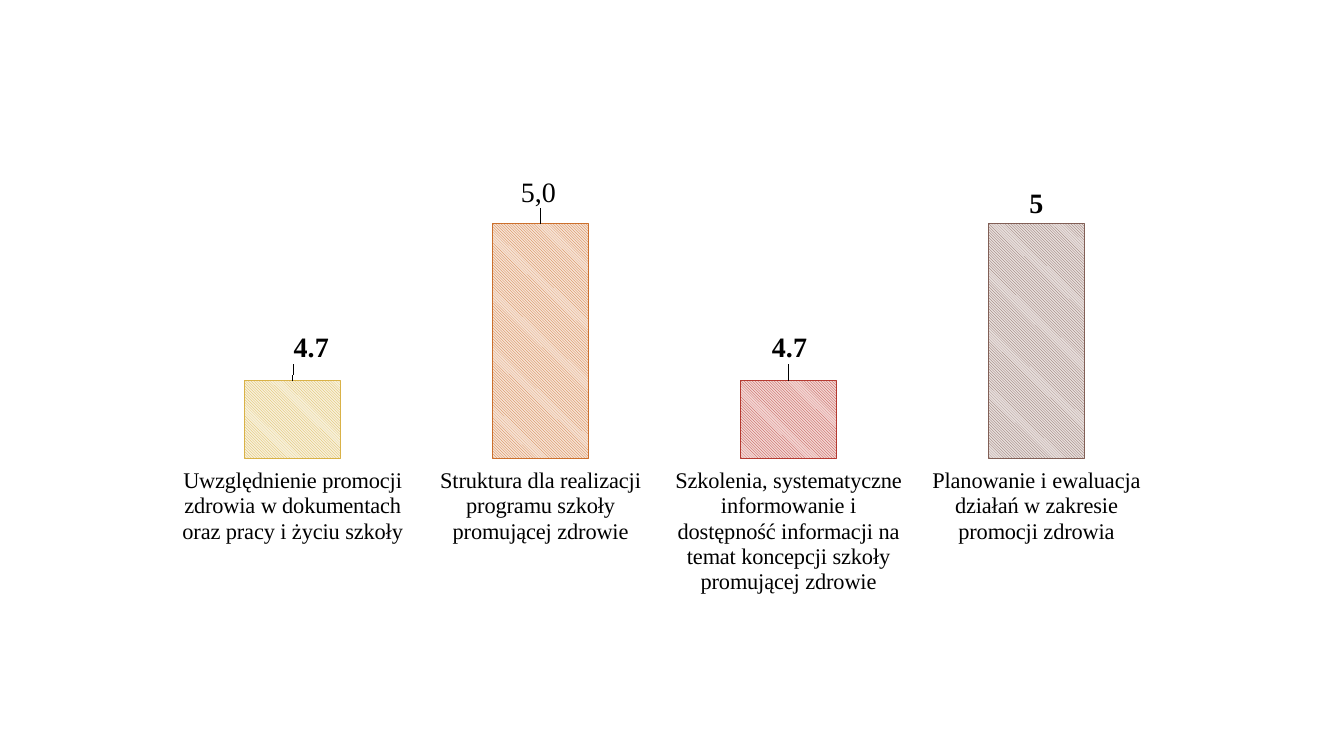
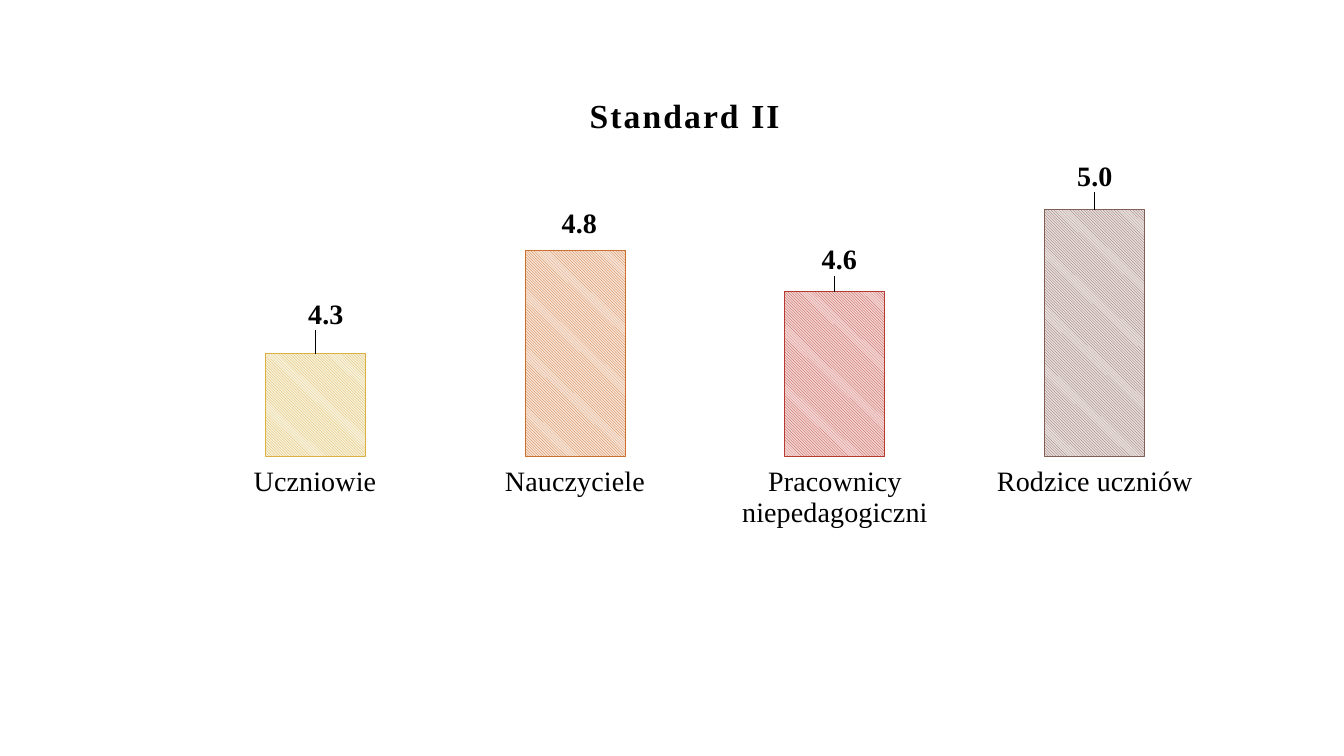
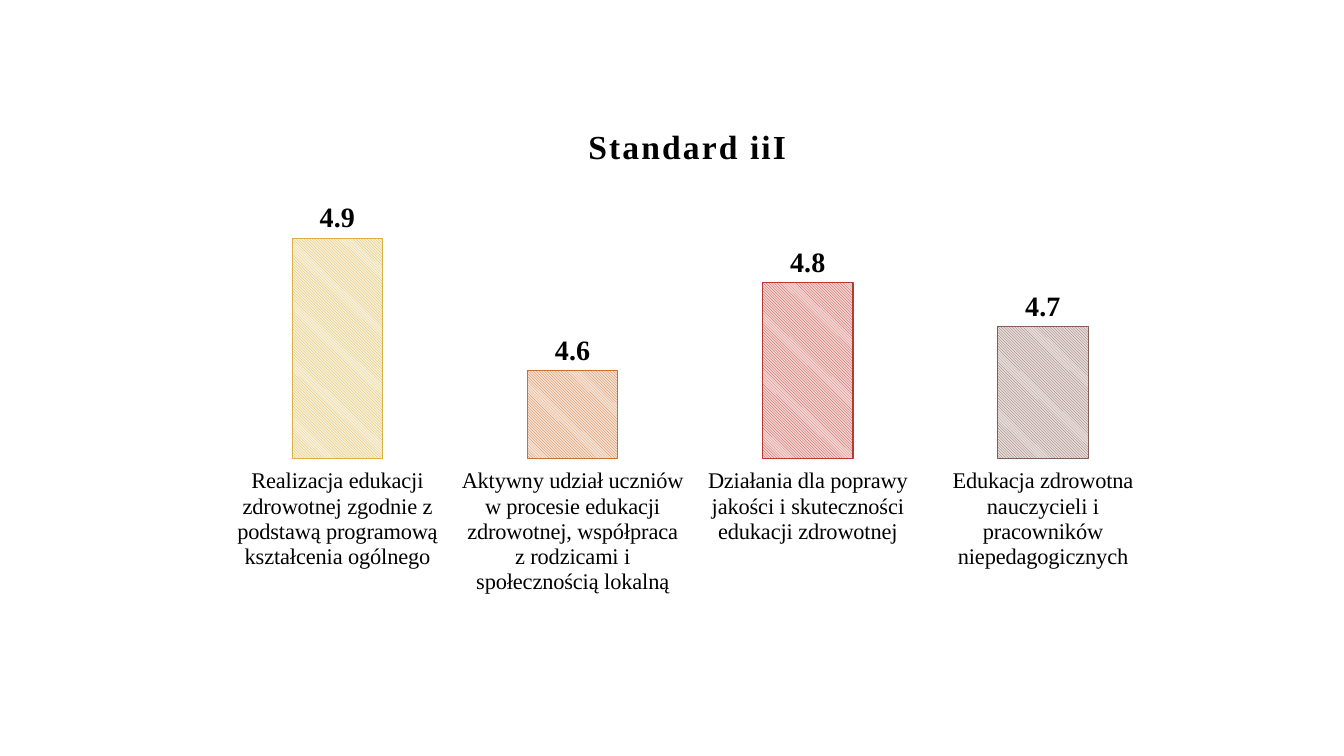
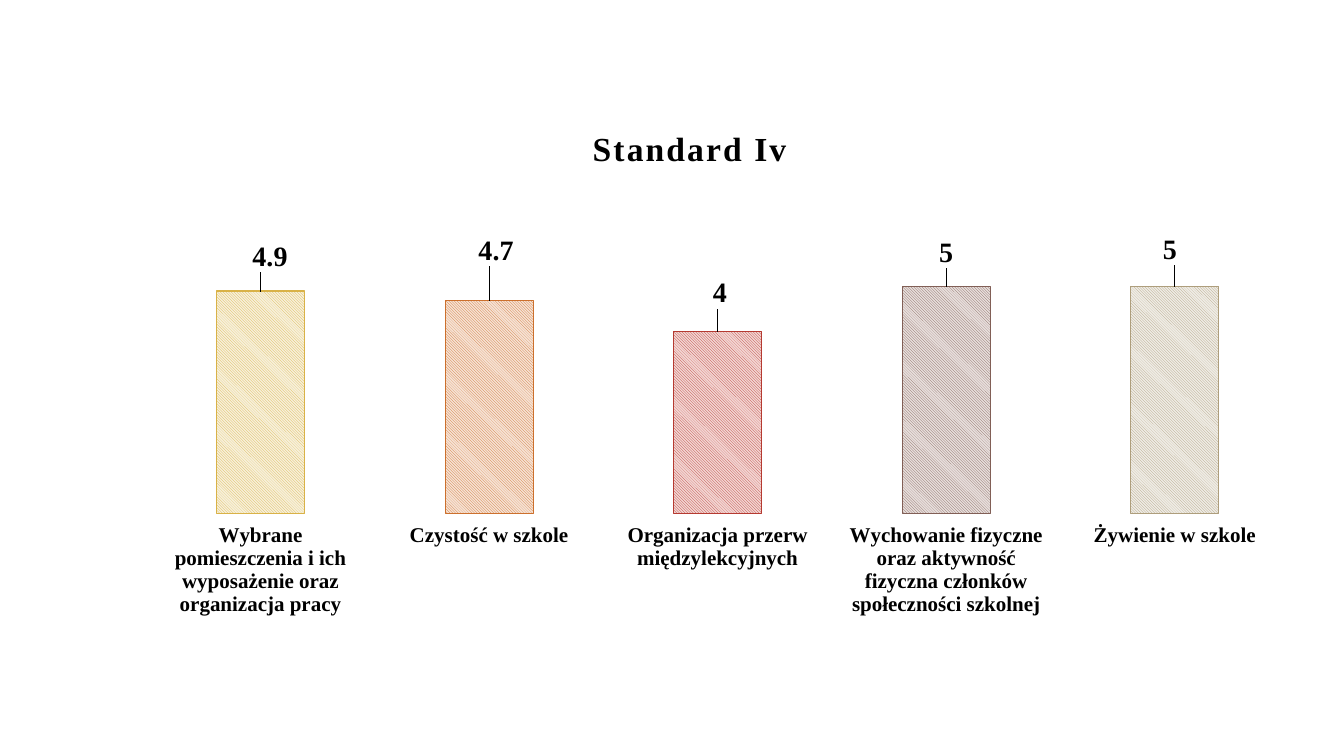
from pptx import Presentation
from pptx.chart.data import CategoryChartData
from pptx.dml.color import RGBColor
from pptx.enum.chart import XL_CHART_TYPE, XL_LABEL_POSITION, XL_TICK_LABEL_POSITION, XL_TICK_MARK
from pptx.enum.dml import MSO_PATTERN
from pptx.oxml import parse_xml
from pptx.oxml.ns import nsdecls
from pptx.util import Inches, Pt

FONT = "Times New Roman"
COLORS = {"text": "000000"}
# (line and hatch, background) of each bar, from left to right
HATCHES = [("D9B247", "F7F0DA"), ("CC702D", "F6E2D4"), ("B53A31", "F3D5D3"),
           ("815F56", "E7DEDC"), ("AE9E7C", "EFECE5")]
TITLE = {"size": Pt(24), "bold": True}
VALUE = {"size": Pt(20), "bold": True}

# box in inches; plot and title in percent of the chart;
# each bar: category, value, label shift in percent, own label text
CHARTS = [
    {"box": (1.21, 0.9, 10.3, 5.56), "plot": (4.5, 19.1, 95.5, 46.6),
     "scale": (4.55, 5.05), "format": "General", "category": {"size": Pt(16), "bold": False},
     "bars": [
         ("Uwzględnienie promocji zdrowia w dokumentach oraz pracy i życiu szkoły", 4.7, (1.8, -2.2), None),
         ("Struktura dla realizacji programu szkoły promującej zdrowie", 5, (-0.2, -2), "5,0"),
         ("Szkolenia, systematyczne informowanie i dostępność informacji na temat koncepcji "
          "szkoły promującej zdrowie", 4.7, (0.1, -2.2), None),
         ("Planowanie i ewaluacja działań w zakresie promocji zdrowia", 5, (0, 0), None)]},
    {"title": ("Standard II", 41.1, 6.1),
     "box": (1.35, 0.5, 10.8, 6.13), "plot": (4.5, 19.1, 95.5, 46.6),
     "scale": (3.8, 5.2), "format": "0.0", "category": {"size": Pt(20), "bold": False},
     "bars": [
         ("Uczniowie", 4.3, (1, -3.1), None),
         ("Nauczyciele", 4.8, (0.4, -1.1), None),
         ("Pracownicy niepedagogiczni", 4.6, (0.4, -1.9), None),
         ("Rodzice uczniów", 5, (0, -2.1), None)]},
    {"title": ("Standard iiI", 40.8, 5.4),
     "box": (1.79, 0.89, 9.77, 5.42), "plot": (4, 19.1, 95.5, 48.5),
     "scale": (4.4, 5), "format": "0.0", "category": {"size": Pt(16), "bold": False},
     "bars": [
         ("Realizacja edukacji zdrowotnej zgodnie z podstawą programową kształcenia ogólnego",
          4.9, (0, 0), None),
         ("Aktywny udział uczniów w procesie edukacji zdrowotnej, współpraca z rodzicami "
          "i społecznością lokalną", 4.6, (0, 0), None),
         ("Działania dla poprawy jakości i skuteczności edukacji zdrowotnej", 4.8, (0, 0), None),
         ("Edukacja zdrowotna nauczycieli i pracowników niepedagogicznych", 4.7, (0, 0), None)]},
    {"title": ("Standard Iv", 41.1, 6),
     "box": (0.94, 0.85, 11.87, 5.8), "plot": (4.3, 26.6, 95.5, 46.6),
     "scale": (0, 6), "format": "General", "category": {"size": Pt(15), "bold": True},
     "bars": [
         ("Wybrane pomieszczenia i ich wyposażenie oraz organizacja pracy", 4.9, (0.8, -2.5), None),
         ("Czystość w szkole", 4.7, (0.6, -5), None),
         ("Organizacja przerw międzylekcyjnych", 4, (0.2, -3.2), None),
         ("Wychowanie fizyczne oraz aktywność fizyczna członków społeczności szkolnej",
          5, (0, -2.4), None),
         ("Żywienie w szkole", 5, (-0.4, -2.9), None)]},
]


def rgb(value):
    return RGBColor.from_string(value)


def style(font, formats):
    for name, value in {"name": FONT, **formats}.items():
        setattr(font, name, value)
    font.color.rgb = rgb(COLORS["text"])


def place(element, index, percents, modes=()):
    """Give a chart part a manual layout, as child number index."""
    for old in element.xpath("./c:layout"):
        element.remove(old)
    tags = [f'<c:{tag} val="{value}"/>' for tag, value in modes]
    tags += [f'<c:{tag} val="{percent / 100:.3f}"/>' for tag, percent in zip("xywh", percents)]
    element.insert(index, parse_xml(
        f'<c:layout {nsdecls("c")}><c:manualLayout>{"".join(tags)}</c:manualLayout></c:layout>'))


def add_title(chart, text, x, y):
    title = chart.chart_title
    r = title.text_frame.paragraphs[0].add_run()
    r.text = text
    style(r.font, TITLE)
    title.element.xpath(".//a:r/a:rPr")[0].set("spc", "150")
    place(title.element, 1, (x, y), [("xMode", "edge"), ("yMode", "edge")])


def format_axes(chart, item):
    categories, values = chart.category_axis, chart.value_axis
    categories.major_tick_mark = categories.minor_tick_mark = XL_TICK_MARK.NONE
    categories.tick_label_position = XL_TICK_LABEL_POSITION.LOW
    categories.format.line.fill.background()
    style(categories.tick_labels.font, item["category"])
    values.minimum_scale, values.maximum_scale = item["scale"]
    values.has_major_gridlines = values.visible = False


def format_bars(chart, item):
    series = chart.plots[0].series[0]
    labels = series.data_labels
    labels.show_value = True
    labels.number_format, labels.number_format_is_linked = item["format"], False
    labels.position = XL_LABEL_POSITION.OUTSIDE_END
    style(labels.font, VALUE)
    for i, ((_, _, shift, text), (line, back)) in enumerate(zip(item["bars"], HATCHES)):
        point = series.points[i]
        fill = point.format.fill
        fill.patterned()
        fill.pattern = MSO_PATTERN.LIGHT_DOWNWARD_DIAGONAL
        fill.fore_color.rgb, fill.back_color.rgb = rgb(line), rgb(back)
        point.format.line.color.rgb = rgb(line)
        point.format.line.width = Pt(0.75)

        label = point.data_label
        label.position = XL_LABEL_POSITION.OUTSIDE_END
        if text:
            r = label.text_frame.paragraphs[0].add_run()
            r.text = text
            style(r.font, {**VALUE, "bold": False})
        else:
            style(label.font, VALUE)
        element = chart.element.xpath(f".//c:dLbl[c:idx/@val='{i}']")[0]
        if not text:
            element.insert(1, parse_xml(
                f'<c:numFmt {nsdecls("c")} formatCode="{item["format"]}" sourceLinked="0"/>'))
        if any(shift):
            place(element, 1, shift)


def add_column_chart(s, item):
    data = CategoryChartData(number_format=item["format"])
    data.categories = [bar[0] for bar in item["bars"]]
    data.add_series("Series 1", [bar[1] for bar in item["bars"]])
    box = [Inches(length) for length in item["box"]]
    chart = s.shapes.add_chart(XL_CHART_TYPE.COLUMN_CLUSTERED, *box, data).chart
    style(chart.font, {"size": Pt(10)})
    chart.has_legend = False
    chart.has_title = "title" in item
    if chart.has_title:
        add_title(chart, *item["title"])
    chart.plots[0].gap_width = 160
    chart.plots[0].vary_by_categories = False
    format_axes(chart, item)
    format_bars(chart, item)
    place(chart.element.xpath(".//c:plotArea")[0], 0, item["plot"],
          [("layoutTarget", "inner"), ("xMode", "edge"), ("yMode", "edge")])


def main():
    prs = Presentation()
    prs.slide_width, prs.slide_height = Inches(13.33), Inches(7.5)
    for item in CHARTS:
        add_column_chart(prs.slides.add_slide(prs.slide_layouts[6]), item)
    prs.save("out.pptx")


if __name__ == "__main__":
    main()
